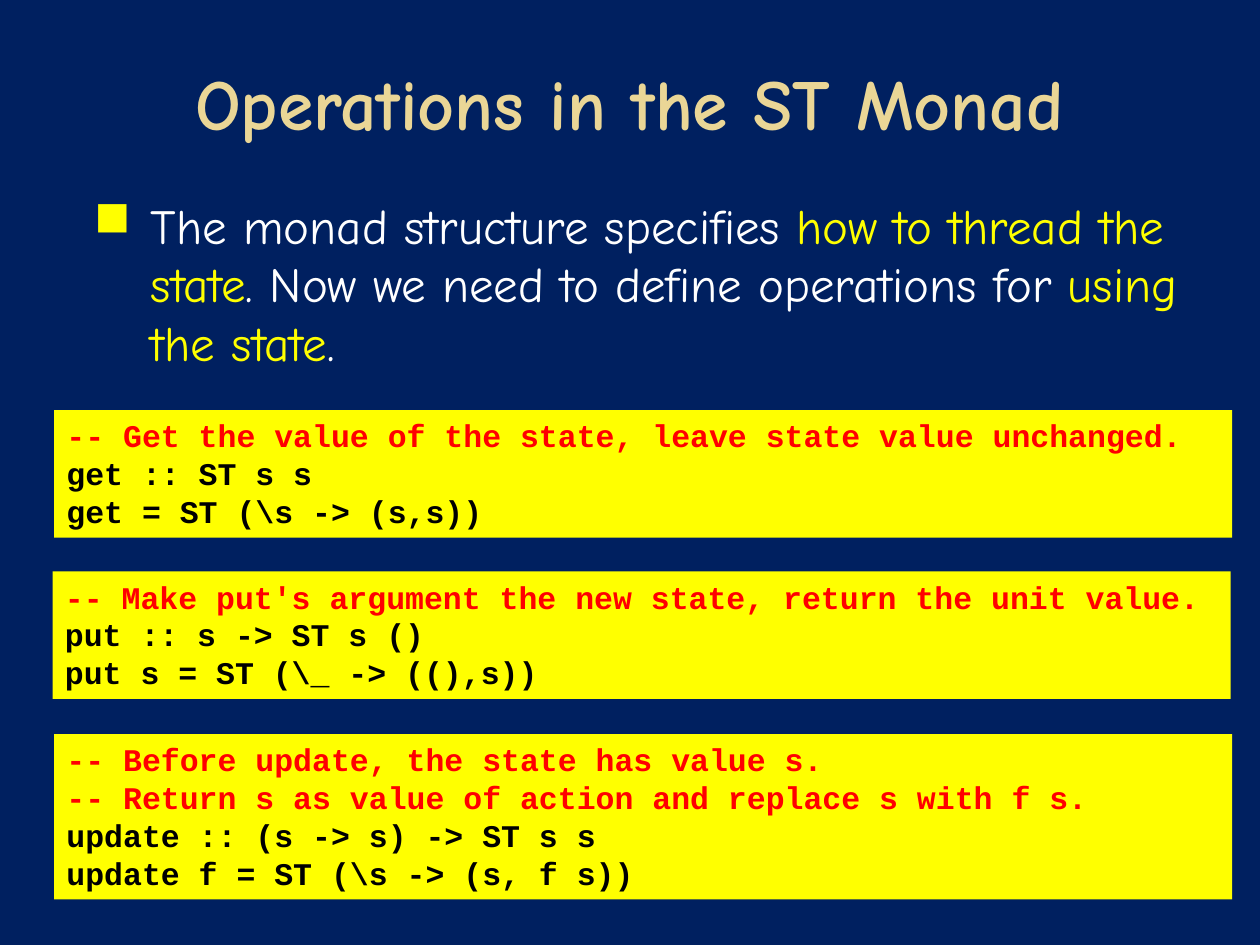
from lxml.etree import SubElement
from pptx import Presentation
from pptx.dml.color import RGBColor
from pptx.enum.shapes import MSO_SHAPE
from pptx.enum.text import MSO_ANCHOR, PP_ALIGN
from pptx.oxml.ns import qn
from pptx.util import Cm, Pt

NAVY, GOLD, WHITE = "002060", "EAD696", "FFFFFF"
YELLOW, RED, BLACK = "FFFF00", "FF0000", "000000"
PROSE, CODE = "Comic Neue", "Courier New"


def color(hex):
    return RGBColor.from_string(hex)


def style(par, face, size, hue, bold=False):
    font = par.font
    font.name, font.size, font.bold = face, Pt(size), bold
    font.color.rgb = color(hue)


def add_text(slide, box, anchor):
    frame = slide.shapes.add_textbox(*map(Cm, box)).text_frame
    frame.word_wrap = True
    frame.vertical_anchor = anchor
    return frame.paragraphs[0]


def add_title(slide, box, text):
    par = add_text(slide, box, MSO_ANCHOR.MIDDLE)
    par.text = text
    par.alignment = PP_ALIGN.CENTER
    style(par, PROSE, 41, GOLD, True)


def add_bullet(par, hue, indent, hang):
    props = par._p.get_or_add_pPr()
    props.set("marL", str(Cm(indent)))
    props.set("indent", str(-Cm(hang)))
    SubElement(SubElement(props, qn("a:buClr")), qn("a:srgbClr"), val=hue)
    SubElement(props, qn("a:buFont"), typeface="Wingdings")
    SubElement(props, qn("a:buChar"), char="n")  # a filled square in Wingdings


def add_point(slide, box, parts):
    """Add a bulleted paragraph; every second part is highlighted."""
    par = add_text(slide, box, MSO_ANCHOR.TOP)
    style(par, PROSE, 28, WHITE)
    add_bullet(par, YELLOW, 1.52, 1.14)
    for i, part in enumerate(parts):
        run = par.add_run()
        run.text = part
        run.font.color.rgb = color(YELLOW if i % 2 else WHITE)


def add_code(slide, box, lines):
    """Add a code panel, with comment lines in red."""
    panel = slide.shapes.add_shape(MSO_SHAPE.RECTANGLE, *map(Cm, box))
    panel.shadow.inherit = False
    panel.fill.solid()
    panel.fill.fore_color.rgb = color(YELLOW)
    panel.line.fill.background()
    frame = panel.text_frame
    frame.word_wrap = True
    frame.vertical_anchor = MSO_ANCHOR.TOP
    for i, line in enumerate(lines):
        par = frame.add_paragraph() if i else frame.paragraphs[0]
        par.text = line
        par.alignment = PP_ALIGN.LEFT
        style(par, CODE, 18, RED if line.startswith("--") else BLACK, True)


def main():
    deck = Presentation()
    deck.slide_width, deck.slide_height = Cm(25.4), Cm(19.05)
    slide = deck.slides.add_slide(deck.slide_layouts[6])
    slide.background.fill.solid()
    slide.background.fill.fore_color.rgb = color(NAVY)

    add_title(slide, (1.27, 0.76, 22.86, 2.59), "Operations in the ST Monad")
    add_point(slide, (1.27, 3.81, 22.86, 13.08), [
        "The monad structure specifies ", "how to thread the state",
        ". Now we need to define operations for ", "using the state", "."])

    panels = [
        (1.09, 8.27, 2.57, [
            "-- Get the value of the state, leave state value unchanged.",
            "get :: ST s s",
            "get = ST (\\s -> (s,s))"]),
        (1.06, 11.52, 2.57, [
            "-- Make put's argument the new state, return the unit value.",
            "put :: s -> ST s ()",
            "put s = ST (\\_ -> ((),s))"]),
        (1.09, 14.8, 3.33, [
            "-- Before update, the state has value s.",
            "-- Return s as value of action and replace s with f s.",
            "update :: (s -> s) -> ST s s",
            "update f = ST (\\s -> (s, f s))"]),
    ]
    for left, top, high, lines in panels:
        add_code(slide, (left, top, 23.75, high), lines)
    deck.save("out.pptx")


if __name__ == "__main__":
    main()
